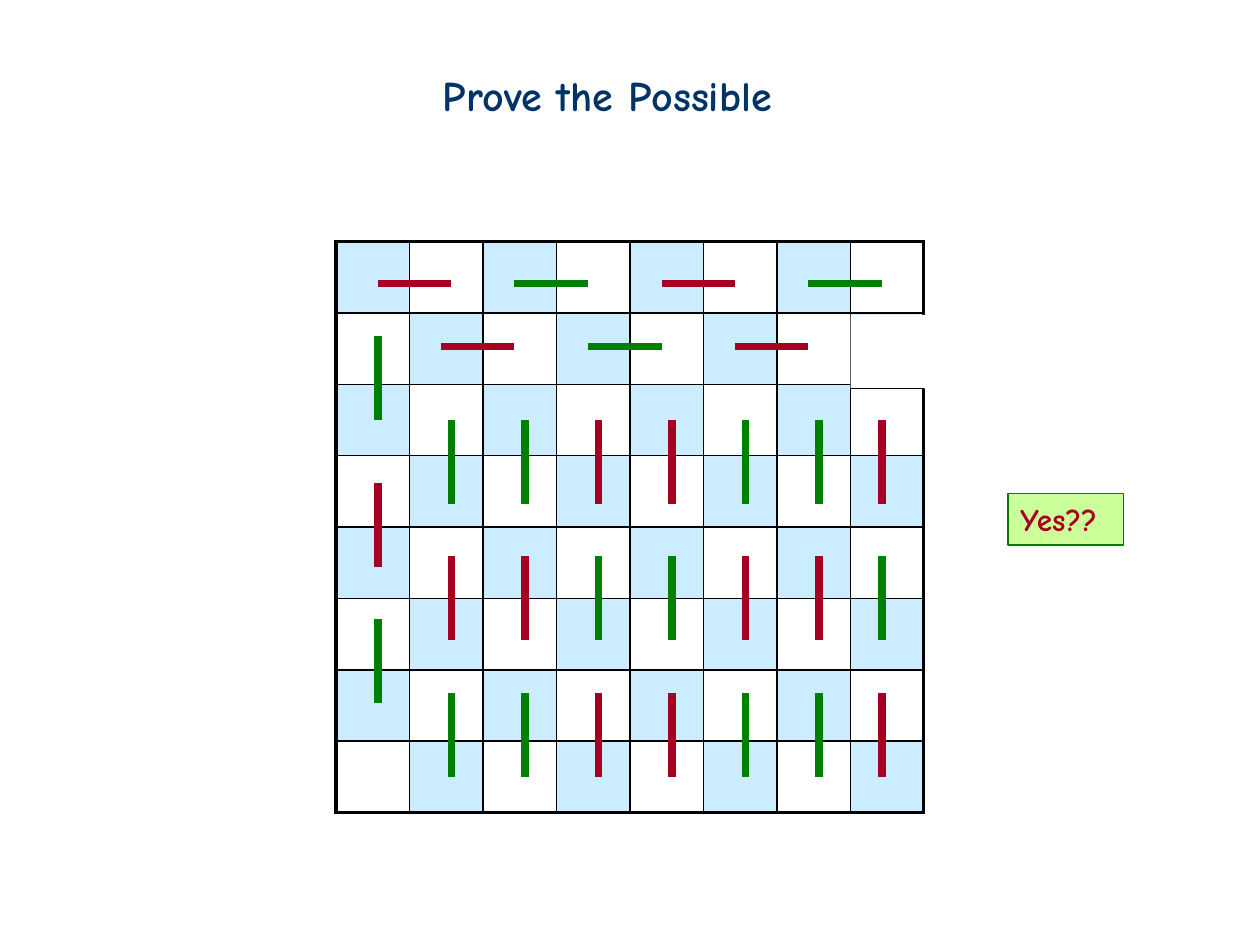
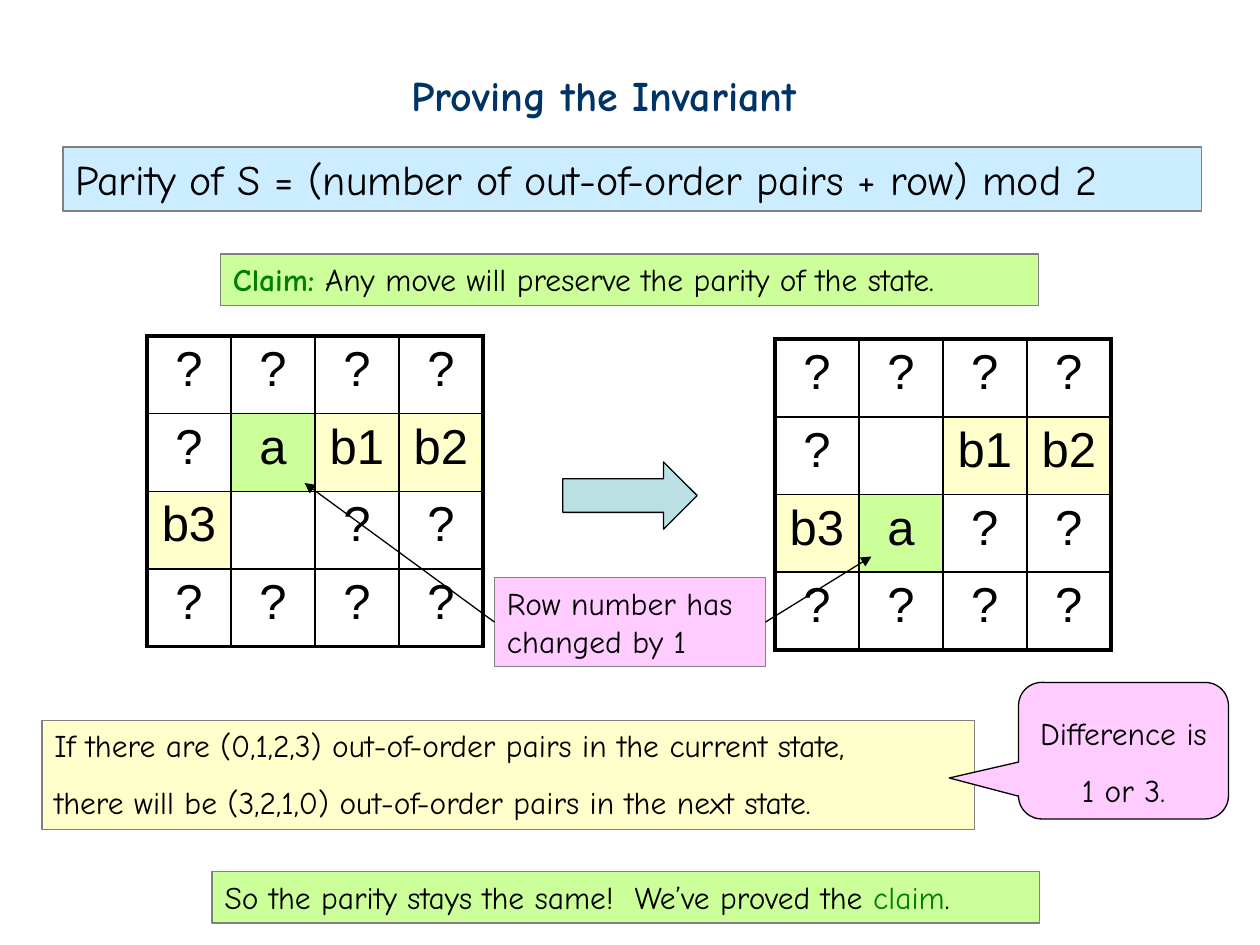
from dataclasses import dataclass
from typing import Callable, Optional

from lxml.etree import SubElement
from pptx import Presentation
from pptx.dml.color import RGBColor
from pptx.enum.shapes import MSO_CONNECTOR as CONN, MSO_SHAPE as SHAPE
from pptx.enum.text import MSO_ANCHOR as ANCHOR, PP_ALIGN as ALIGN
from pptx.oxml.ns import qn
from pptx.util import Pt

# Shared look
PX = 7620  # EMU per px, 120 px to the inch
FONT, GRID_FONT = "Comic Neue", "Arial"
BLACK = RGBColor(0x00, 0x00, 0x00)
WHITE = RGBColor(0xFF, 0xFF, 0xFF)
NAVY = RGBColor(0x00, 0x33, 0x66)
GREEN = RGBColor(0x00, 0x80, 0x00)
RED = RGBColor(0xA5, 0x00, 0x21)
GRAY = RGBColor(0x80, 0x80, 0x80)
SKY = RGBColor(0xCC, 0xEC, 0xFF)
LIME = RGBColor(0xCC, 0xFF, 0x99)
CREAM = RGBColor(0xFF, 0xFF, 0xCC)
PINK = RGBColor(0xFF, 0xCC, 0xFF)
TEAL = RGBColor(0xBB, 0xE0, 0xE3)


@dataclass(frozen=True)
class Rect:
    x: int
    y: int
    w: int
    h: int

    def emu(self) -> tuple[int, ...]:
        return tuple(v * PX for v in (self.x, self.y, self.w, self.h))


@dataclass(frozen=True)
class Run:
    text: str
    color: Optional[RGBColor] = None
    bold: Optional[bool] = None


@dataclass(frozen=True)
class Para:
    runs: tuple[Run, ...]
    spacing: Optional[float] = None


@dataclass(frozen=True)
class Box:
    rect: Rect
    paras: tuple[Para, ...]
    fill: Optional[RGBColor] = None
    line: RGBColor = GRAY
    size: int = 18
    color: RGBColor = BLACK
    bold: bool = False


@dataclass(frozen=True)
class Grid:
    x: int
    y: int
    cell_w: int
    cell_h: int
    rows: tuple[tuple[str, ...], ...]


@dataclass(frozen=True)
class Line:
    x1: int
    y1: int
    x2: int
    y2: int
    color: RGBColor = BLACK
    width: float = 0.75


def plain(text: str, spacing: Optional[float] = None) -> Para:
    return Para((Run(text),), spacing)


def style(p, size: int, color: RGBColor, bold: bool = False, font: str = FONT) -> None:
    p.font.name, p.font.size, p.font.bold = font, Pt(size), bold
    p.font.color.rgb = color


def paint(sp, fill: RGBColor, line: Optional[RGBColor]) -> None:
    sp.fill.solid()
    sp.fill.fore_color.rgb = fill
    if line is None:
        sp.line.fill.background()
    else:
        sp.line.color.rgb = line
        sp.line.width = Pt(0.75)


def add_preset(s, kind, rect: Rect, fill: RGBColor, line: Optional[RGBColor] = BLACK):
    sp = s.shapes.add_shape(kind, *rect.emu())
    sp.shadow.inherit = False
    paint(sp, fill, line)
    return sp


def add_box(s, box: Box):
    sp = s.shapes.add_textbox(*box.rect.emu())
    if box.fill is not None:
        paint(sp, box.fill, box.line)
    tf = sp.text_frame
    tf.word_wrap = True
    for i, para in enumerate(box.paras):
        p = tf.add_paragraph() if i else tf.paragraphs[0]
        style(p, box.size, box.color, box.bold)
        if para.spacing:
            p.line_spacing = para.spacing
        for run in para.runs:
            r = p.add_run()
            r.text = run.text
            if run.bold is not None:
                r.font.bold = run.bold
            if run.color is not None:
                r.font.color.rgb = run.color
    return sp


def add_title(s, text: str, x: int, w: int) -> None:
    add_box(s, Box(Rect(x, 60, w, 60), (plain(text),), size=24, color=NAVY, bold=True))


def add_line(s, line: Line, arrow: bool = False):
    ends = (v * PX for v in (line.x1, line.y1, line.x2, line.y2))
    c = s.shapes.add_connector(CONN.STRAIGHT, *ends)
    c.line.color.rgb = line.color
    c.line.width = Pt(line.width)
    if arrow:
        SubElement(c.line._get_or_add_ln(), qn("a:tailEnd"), type="triangle")
    SubElement(c._element.spPr, qn("a:effectLst"))
    return c


def set_borders(cell, outer: dict[str, bool]) -> None:
    """Outer sides are thick, inner ones thin; borders come before the fill."""
    tc_pr = cell._tc.get_or_add_tcPr()
    for i, side in enumerate("LRTB"):
        width = Pt(2.25) if outer[side] else Pt(1)
        ln = SubElement(tc_pr, qn(f"a:ln{side}"), w=str(int(width)))
        SubElement(SubElement(ln, qn("a:solidFill")), qn("a:srgbClr"), val=str(BLACK))
        tc_pr.insert(i, ln)


def add_grid(s, grid: Grid, fill_of: Callable[[int, int, str], Optional[RGBColor]]) -> None:
    n_rows, n_cols = len(grid.rows), len(grid.rows[0])
    rect = Rect(grid.x, grid.y, n_cols * grid.cell_w, n_rows * grid.cell_h)
    table = s.shapes.add_table(n_rows, n_cols, *rect.emu()).table
    table.first_row = table.horz_banding = False
    for r, row in enumerate(grid.rows):
        for c, text in enumerate(row):
            cell = table.cell(r, c)
            fill = fill_of(r, c, text)
            if fill is None:
                cell.fill.background()
            else:
                cell.fill.solid()
                cell.fill.fore_color.rgb = fill
            if text:
                p = cell.text_frame.paragraphs[0]
                p.add_run().text = text
                p.alignment = ALIGN.CENTER
                style(p, 28, BLACK, font=GRID_FONT)
            set_borders(cell, {"L": c == 0, "R": c == n_cols - 1,
                               "T": r == 0, "B": r == n_rows - 1})


def checker_fill(r: int, c: int, text: str) -> Optional[RGBColor]:
    return SKY if (r + c) % 2 == 0 else None


def tile_fill(r: int, c: int, text: str) -> Optional[RGBColor]:
    if text == "a":
        return LIME
    return CREAM if text.startswith("b") else None


def dominoes() -> list[Line]:
    def horizontal(x: int, y: int, green: bool) -> Line:
        return Line(x, y, x + 70, y, GREEN if green else RED, 4.5)

    def vertical(x: int, y: int, green: bool) -> Line:
        return Line(x, y, x, y + 80, GREEN if green else RED, 4.5)

    top = [horizontal(x, 270, i % 2 == 1) for i, x in enumerate((360, 490, 630, 770))]
    second = [horizontal(420 + 140 * i, 330, i == 1) for i in range(3)]
    left = [vertical(360, y, i != 1) for i, y in enumerate((320, 460, 590))]
    columns = (430, 500, 570, 640, 710, 780, 840)
    rest = [vertical(x, 400 + 130 * band, (c // 2 + band) % 2 == 0)
            for band in range(3) for c, x in enumerate(columns)]
    return top + second + left + rest


def build_possible(s) -> None:
    # Board with one square removed
    add_grid(s, Grid(320, 230, 70, 68, (("",) * 8,) * 8), checker_fill)
    add_preset(s, SHAPE.RECTANGLE, Rect(810, 300, 80, 70), WHITE, None)
    add_title(s, "Prove the Possible", 410, 376)
    add_line(s, Line(810, 370, 880, 370))
    # Domino tiling
    for domino in dominoes():
        add_line(s, domino)
    add_box(s, Box(Rect(960, 470, 110, 49), (plain("Yes??"),), LIME, GREEN,
                   color=RED, bold=True))


def build_invariant(s) -> None:
    add_title(s, "Proving the Invariant", 380, 434)
    # Claim and definition
    claim = Para((Run("Claim:", GREEN, True),
                  Run(" Any move will preserve the parity of the state.")))
    add_box(s, Box(Rect(210, 242, 779, 49), (claim,), LIME))
    parity = plain("Parity of S = (number of out-of-order pairs + row) mod 2")
    add_box(s, Box(Rect(60, 140, 1084, 61), (parity,), SKY, size=24))

    # Puzzle before and after the move
    unknown = ("?",) * 4
    before = (unknown, ("?", "a", "b1", "b2"), ("b3", "", "?", "?"), unknown)
    after = (unknown, ("?", "", "b1", "b2"), ("b3", "a", "?", "?"), unknown)
    add_grid(s, Grid(140, 320, 80, 74, before), tile_fill)
    add_grid(s, Grid(738, 323, 80, 74, after), tile_fill)
    add_preset(s, SHAPE.RIGHT_ARROW, Rect(536, 440, 128, 64), TEAL)

    # Argument
    add_box(s, Box(Rect(40, 686, 888, 104), (
        plain("If there are (0,1,2,3) out-of-order pairs in the current state,"),
        plain("there will be (3,2,1,0) out-of-order pairs in the next state.", 1.5),
    ), CREAM))
    row_note = add_box(s, Box(Rect(471, 550, 258, 85), (
        plain("Row number has"), plain("changed by 1")), PINK))
    for side, line in ((1, Line(471, 592, 290, 460)), (3, Line(729, 592, 830, 530))):
        add_line(s, line, arrow=True).begin_connect(row_note, side)
    add_box(s, Box(Rect(202, 830, 788, 49), (Para((
        Run("So the parity stays the same!  We’ve proved the "),
        Run("claim", GREEN), Run("."))),), LIME))

    # Callout
    sp = add_preset(s, SHAPE.ROUNDED_RECTANGULAR_CALLOUT, Rect(970, 650, 200, 130), PINK)
    for i, value in enumerate((-0.83, 0.2, 0.17)):
        sp.adjustments[i] = value
    tf = sp.text_frame
    tf.word_wrap = True
    tf.vertical_anchor = ANCHOR.TOP
    p = tf.paragraphs[0]
    p.alignment, p.line_spacing = ALIGN.CENTER, 1.5
    p.add_run().text = "Difference is 1 or 3."
    style(p, 18, BLACK)


def main() -> None:
    prs = Presentation()
    prs.slide_width, prs.slide_height = 1200 * PX, 900 * PX
    for build in (build_possible, build_invariant):
        build(prs.slides.add_slide(prs.slide_layouts[6]))
    prs.save("out.pptx")


if __name__ == "__main__":
    main()
